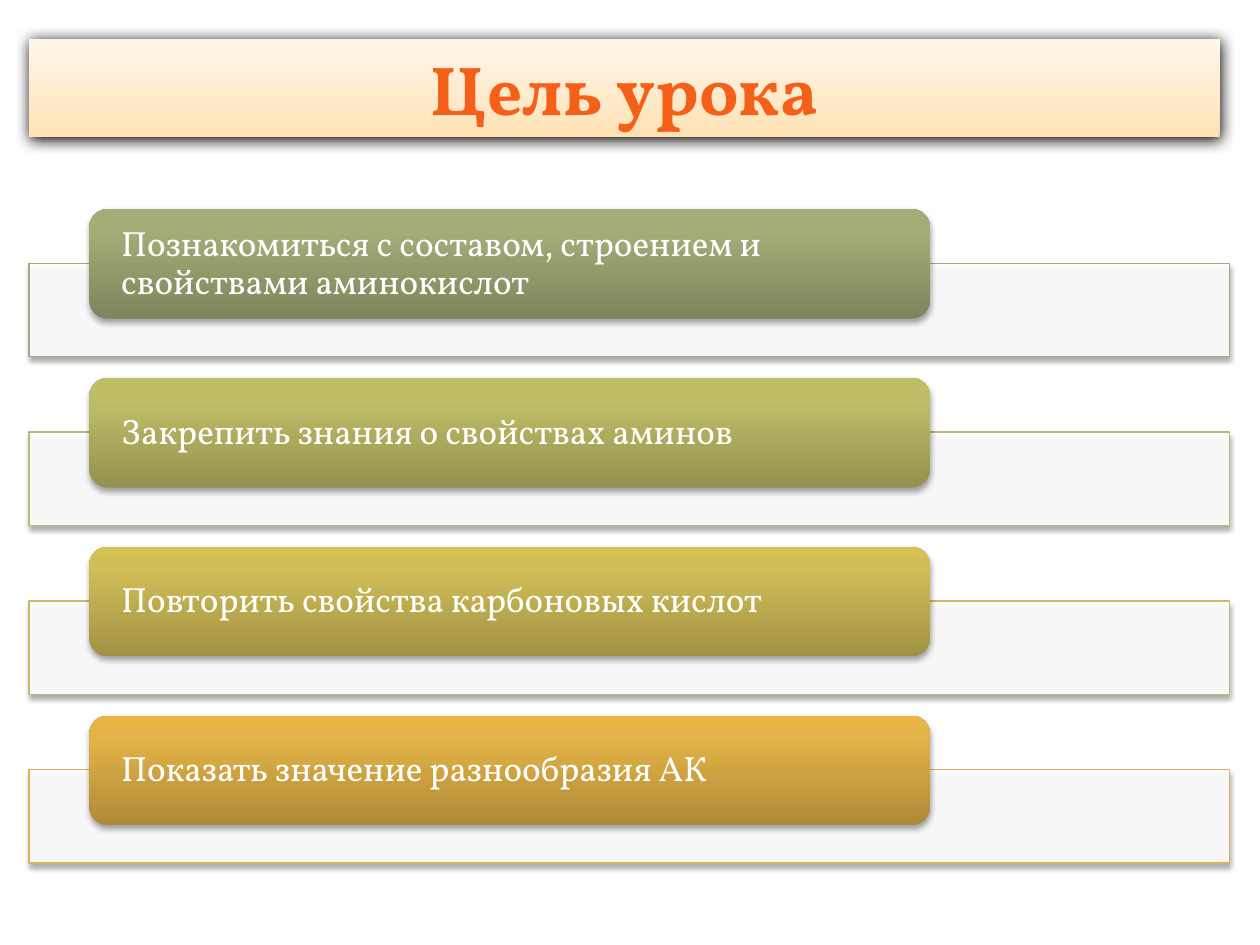
from lxml import etree
from pptx import Presentation
from pptx.dml.color import RGBColor
from pptx.enum import shapes, text
from pptx.oxml import ns
from pptx.util import Inches, Pt

FONT = "Vollkorn"
COLORS = {"white": "FFFFFF", "shadow": "000000"}
BANNER_STOPS = [(0, "FFE1B2"), (35, "FFE9C8"), (100, "FFF6EA")]
TITLE_STOPS = [(0, "FFA988"), (75, "F46019"), (100, "D85200")]

# Goal text, panel outline, gradient colours of the label from bottom to top
GOALS = [
    ("Познакомиться с составом, строением и свойствами аминокислот",
     "A5AB81", ("7E845C", "A4AC77", "A6AE76")),
    ("Закрепить знания о свойствах аминов",
     "BABA74", ("93924F", "BFBE67", "C1C165")),
    ("Повторить свойства карбоновых кислот",
     "C9BA68", ("A19243", "D1BE57", "D5C155")),
    ("Показать значение разнообразия АК",
     "D8B25C", ("AF8A37", "E3B347", "E7B544")),
]


def add_child(parent, tag, **attributes):
    child = etree.SubElement(parent, ns.qn(tag))
    for name, value in attributes.items():
        child.set(name, str(value))
    return child


def set_gradient(fill, properties, stops, angle):
    """Fill with any number of (percent, colour) stops."""
    fill.gradient()
    fill.gradient_angle = angle
    stop_list = properties.find(ns.qn("a:gradFill")).find(ns.qn("a:gsLst"))
    for stop in list(stop_list):
        stop_list.remove(stop)
    for percent, color in stops:
        stop = add_child(stop_list, "a:gs", pos=percent * 1000)
        add_child(stop, "a:srgbClr", val=color)


def set_shadow(shape, opacity, blur, distance):
    shape.shadow.inherit = False
    effects = shape._element.spPr.find(ns.qn("a:effectLst"))
    shadow = add_child(effects, "a:outerShdw", blurRad=Pt(blur), dist=Pt(distance),
                       dir=90 * 60000, algn="ctr", rotWithShape=0)
    color = add_child(shadow, "a:srgbClr", val=COLORS["shadow"])
    add_child(color, "a:alpha", val=opacity * 1000)


def add_title(slide, left, top, width, height):
    title = slide.shapes.title
    title.left, title.top, title.width, title.height = left, top, width, height
    set_gradient(title.fill, title._element.spPr, BANNER_STOPS, 90)
    set_shadow(title, 100, 8.5, 1)
    frame = title.text_frame
    frame.text = "Цель урока"
    frame.vertical_anchor = text.MSO_ANCHOR.MIDDLE
    paragraph = frame.paragraphs[0]
    paragraph.alignment = text.PP_ALIGN.CENTER
    run = paragraph.runs[0]
    run.font.size, run.font.name, run.font.bold = Pt(39.6), FONT, True
    set_gradient(run.font.fill, run._r.get_or_add_rPr(), TITLE_STOPS, -90)


def add_panel(slide, left, top, width, height, line_color):
    panel = slide.shapes.add_shape(shapes.MSO_SHAPE.RECTANGLE, left, top, width, height)
    panel.fill.solid()
    panel.fill.fore_color.rgb = RGBColor.from_string(COLORS["white"])
    fill_color = panel._element.spPr.find(ns.qn("a:solidFill"))[0]
    add_child(fill_color, "a:alpha", val=90000)
    panel.line.color.rgb = RGBColor.from_string(line_color)
    panel.line.width = Pt(0.75)
    set_shadow(panel, 35, 3.1, 1.8)


def add_label(slide, left, top, width, height, goal, colors):
    label = slide.shapes.add_shape(
        shapes.MSO_SHAPE.ROUNDED_RECTANGLE, left, top, width, height)
    set_gradient(label.fill, label._element.spPr, zip((0, 80, 100), colors), 90)
    label.line.fill.background()
    set_shadow(label, 35, 3.1, 1.8)
    frame = label.text_frame
    frame.text = goal
    frame.word_wrap = True
    frame.vertical_anchor = text.MSO_ANCHOR.MIDDLE
    frame.margin_left = frame.margin_right = Inches(0.21)
    frame.margin_top = frame.margin_bottom = 0
    paragraph = frame.paragraphs[0]
    paragraph.alignment = text.PP_ALIGN.LEFT
    paragraph.line_spacing = 0.9
    font = paragraph.runs[0].font
    font.size, font.name = Pt(20), FONT
    font.color.rgb = RGBColor.from_string(COLORS["white"])


def add_goals(slide, left, top, width, pitch):
    for index, (goal, line_color, colors) in enumerate(GOALS):
        row_top = top + index * pitch
        add_panel(slide, left, row_top + Inches(0.43), width, Inches(0.74), line_color)
        add_label(slide, left + Inches(0.48), row_top, int(width * 0.7), Inches(0.87),
                  goal, colors)


def main():
    presentation = Presentation()
    presentation.slide_width, presentation.slide_height = Inches(10), Inches(7.5)
    slide = presentation.slides.add_slide(presentation.slide_layouts[5])
    # Title banner
    add_title(slide, Inches(0.23), Inches(0.31), Inches(9.45), Inches(0.78))
    # Lesson goals
    add_goals(slide, Inches(0.23), Inches(1.66), Inches(9.53), Inches(1.34))
    presentation.save("out.pptx")


if __name__ == "__main__":
    main()
